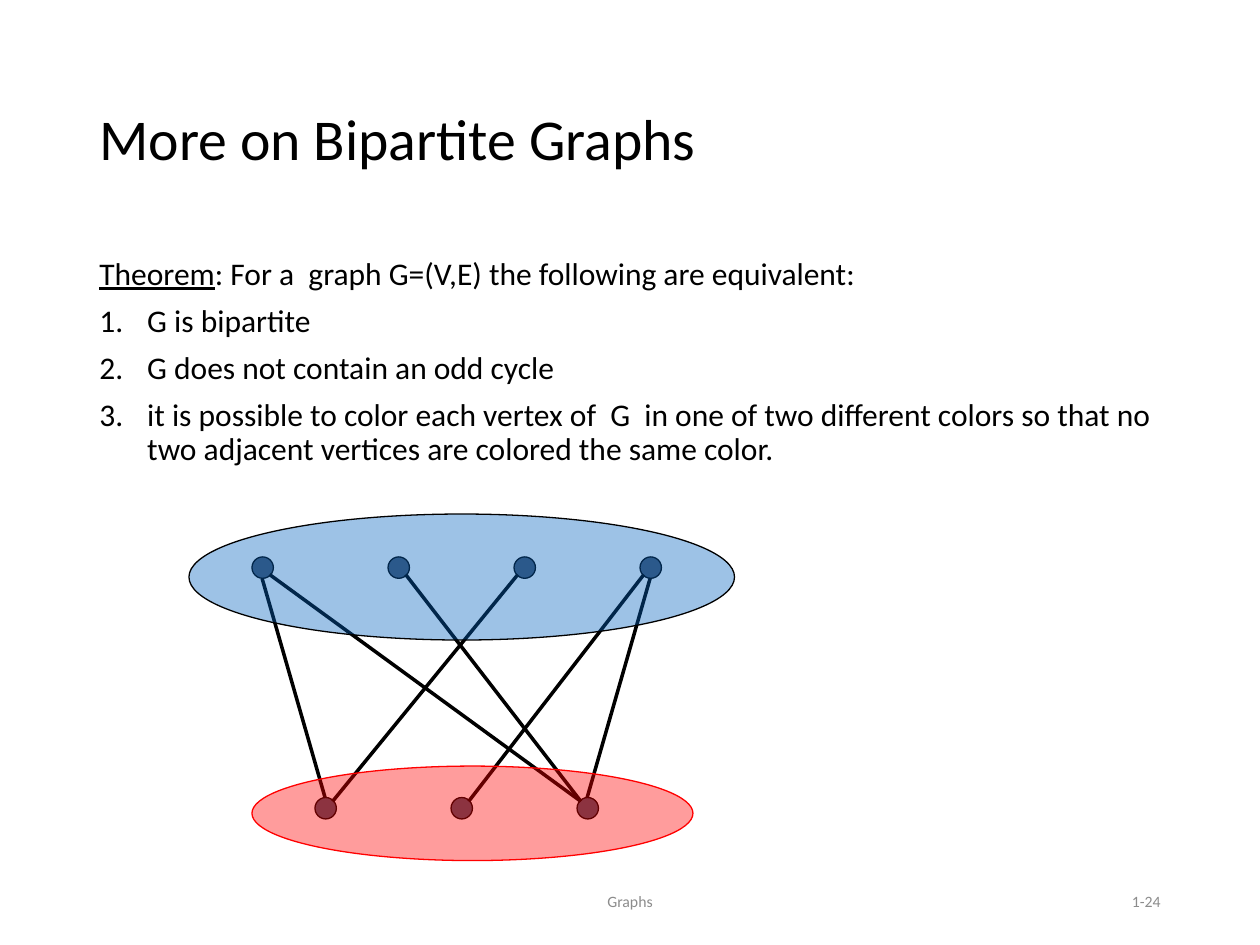
"""Builds a slide on equivalent characterisations of bipartite graphs."""
from dataclasses import dataclass

from lxml.etree import SubElement
from pptx import Presentation
from pptx.dml.color import RGBColor
from pptx.enum.shapes import MSO_CONNECTOR, MSO_SHAPE
from pptx.enum.text import MSO_ANCHOR, PP_ALIGN
from pptx.oxml.ns import qn
from pptx.util import Pt


@dataclass(frozen=True)
class Theme:
    font: str = "Calibri"
    ink: str = "000000"
    muted: str = "8C8C8C"
    vertex: str = "44546A"
    red: str = "FF0000"
    blue: str = "0563C1"
    title_size: int = 33
    body_size: int = 18
    footer_size: int = 9
    outline: float = 0.75
    edge: int = 2
    alpha: int = 39


THEME = Theme()
PX = 9144


def add_text(box, paragraphs, size, color, anchor=MSO_ANCHOR.MIDDLE, align=PP_ALIGN.LEFT):
    frame = slide.shapes.add_textbox(*(v * PX for v in box)).text_frame
    frame.word_wrap = True
    frame.vertical_anchor = anchor
    for i, runs in enumerate(paragraphs):
        paragraph = frame.paragraphs[0] if i == 0 else frame.add_paragraph()
        paragraph.alignment = align
        for words, underlined in runs:
            run = paragraph.add_run()
            run.text = words
            run.font.name = THEME.font
            run.font.size = Pt(size)
            run.font.underline = underlined
            run.font.color.rgb = RGBColor.from_string(color)
    return frame.paragraphs


def add_ellipse(box, fill, line):
    ellipse = slide.shapes.add_shape(MSO_SHAPE.OVAL, *(v * PX for v in box))
    ellipse.shadow.inherit = False
    ellipse.fill.solid()
    ellipse.fill.fore_color.rgb = RGBColor.from_string(fill)
    ellipse.line.color.rgb = RGBColor.from_string(line)
    ellipse.line.width = Pt(THEME.outline)
    return ellipse


prs = Presentation()
prs.slide_width, prs.slide_height = 1000 * PX, 750 * PX
slide = prs.slides.add_slide(prs.slide_layouts[6])

title = add_text((69, 40, 862, 145), [[("More on Bipartite Graphs", False)]],
                 THEME.title_size, THEME.ink)
title[0].line_spacing = 0.9

theorem = add_text(
    (69, 200, 862, 476),
    [
        [("Theorem", True), (": For a  graph G=(V,E) the following are equivalent:", False)],
        [("G is bipartite", False)],
        [("G does not contain an odd cycle", False)],
        [("it is possible to color each vertex of  G  in one of two different colors "
          "so that no two adjacent vertices are colored the same color.", False)],
    ],
    THEME.body_size, THEME.ink, MSO_ANCHOR.TOP)
for paragraph in theorem:
    paragraph.line_spacing = 0.9
    paragraph.space_before = Pt(7.5)
for statement in theorem[1:]:
    properties = statement._p.get_or_add_pPr()
    properties.set("marL", str(38 * PX))
    properties.set("indent", str(-38 * PX))
    SubElement(properties, qn("a:buFont"), typeface="+mj-lt")
    SubElement(properties, qn("a:buAutoNum"), type="arabicPeriod")

for box, words, align in [
    ((331, 695, 338, 40), "Graphs", PP_ALIGN.CENTER),
    ((706, 695, 225, 40), "1-24", PP_ALIGN.RIGHT),
]:
    add_text(box, [[(words, False)]], THEME.footer_size, THEME.muted, align=align)

DIAMETER = 17
upper = [(x, 442) for x in (200, 308, 408, 508)]
lower = [(x, 633) for x in (250, 358, 458)]
for x, y in upper + lower:
    add_ellipse((x, y, DIAMETER, DIAMETER), THEME.vertex, THEME.ink)

RIM = {"top": (8, 0), "top left": (3, 3), "top right": (14, 3),
       "bottom": (8, 17), "bottom left": (3, 14), "bottom right": (14, 14)}
for start, start_rim, end, end_rim in [
    (0, "bottom", 0, "top"),
    (2, "bottom left", 0, "top right"),
    (0, "bottom right", 2, "top left"),
    (1, "bottom right", 2, "top left"),
    (3, "bottom left", 1, "top right"),
    (3, "bottom", 2, "top"),
]:
    ends = [vertex[axis] + RIM[rim][axis]
            for vertex, rim in ((upper[start], start_rim), (lower[end], end_rim))
            for axis in (0, 1)]
    edge = slide.shapes.add_connector(MSO_CONNECTOR.STRAIGHT, *(v * PX for v in ends))
    edge.line.color.rgb = RGBColor.from_string(THEME.ink)
    edge.line.width = Pt(THEME.edge)
    SubElement(edge._element.spPr, qn("a:effectLst"))

for box, fill, line in [
    ((200, 608, 350, 75), THEME.red, THEME.red),
    ((150, 408, 433, 100), THEME.blue, THEME.ink),
]:
    vertex_class = add_ellipse(box, fill, line)
    tint = vertex_class._element.spPr.find(qn("a:solidFill"))[0]
    SubElement(tint, qn("a:alpha"), val=str(THEME.alpha * 1000))

prs.save("out.pptx")
